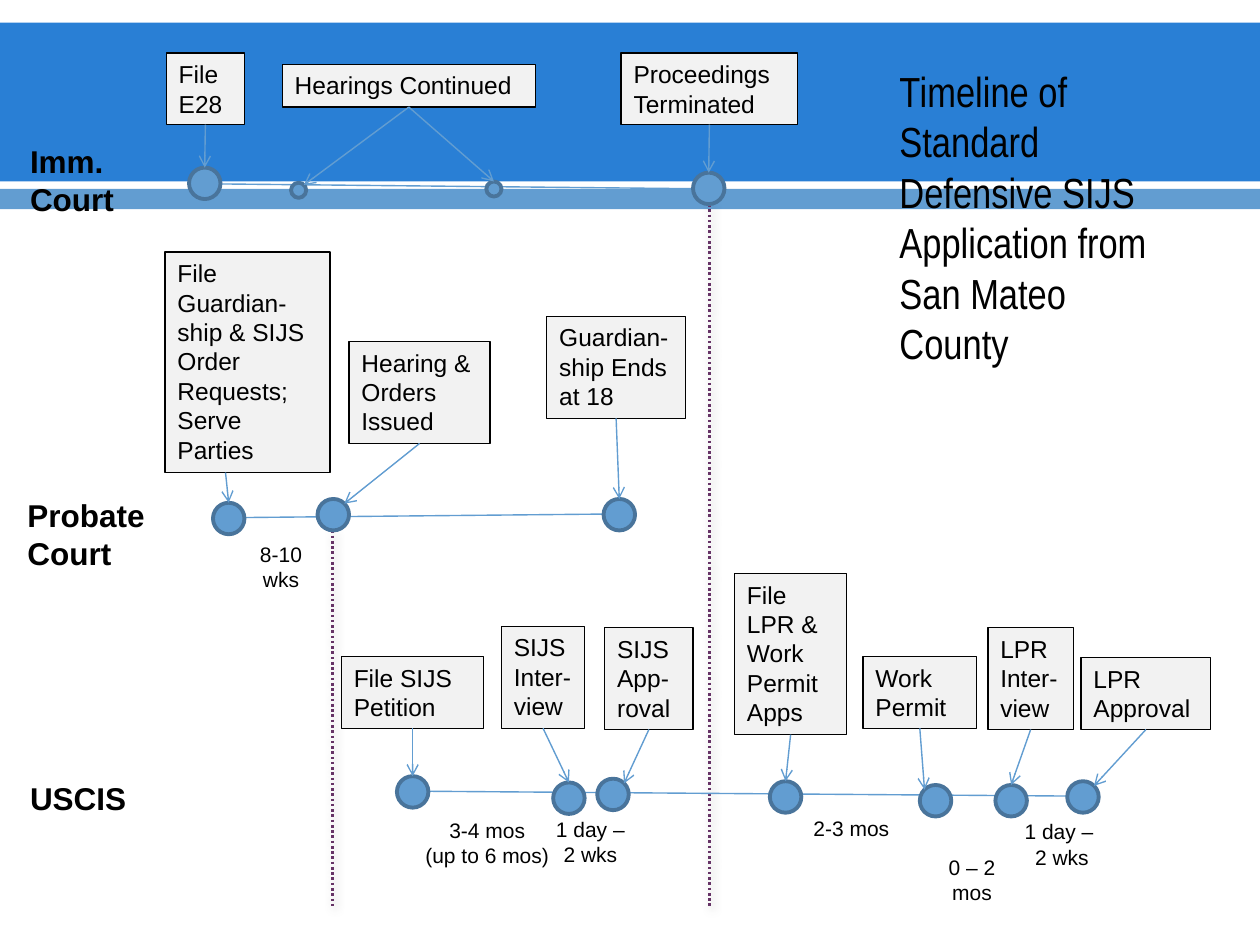
from lxml.etree import SubElement
from pptx import Presentation
from pptx.dml.color import RGBColor as Rgb
from pptx.enum.dml import MSO_LINE as Dash
from pptx.enum.shapes import MSO_CONNECTOR as Conn, MSO_SHAPE as Kind
from pptx.enum.text import MSO_ANCHOR as Anchor, MSO_AUTO_SIZE as Fit, PP_ALIGN as Align
from pptx.oxml.ns import qn
from pptx.util import Inches, Pt

# Every place is in columns and rows of a 100 by 75 grid
COLS, ROWS = 100, 75
DOT, SMALL = 2.5, 1.2
FOOT = 71.9

HUE = {"band": "297FD5", "blue": "629DD1", "rim": "49749B", "box": "F2F2F2",
       "ink": "000000", "mark": "663366"}

TITLE = ("Timeline of Standard Defensive SIJS Application from San Mateo County",
         70.4, 4.7, 22.5, 25.2)

BANDS = [("band", 1.8, 12.6), ("blue", 15, 1.6)]

COURTS = [
    ("Imm. Court", 1.4, 10.8, 9.3, 7.1),
    ("Probate Court", 1.2, 38.9, 11.6, 7.1),
    ("USCIS", 1.4, 61.3, 11.6, 4),
]

RAILS = [(17.5, 14.6, 57.5, 15), (16.9, 41.1, 47.9, 40.8), (34, 62.8, 87.2, 63.2)]

# Text, box place, then dots: left, top, size, where the arrow lands
STEPS = [
    ("File\nE28", (13.2, 4.2, 6.2, 5.7), [(15, 13.3, DOT, "top")]),
    ("Hearings Continued", (22.4, 5.1, 20.1, 3.4),
     [(23.1, 14.5, SMALL, "right"), (38.6, 14.4, SMALL, "top")]),
    ("Proceedings Terminated", (49.3, 4.2, 14, 5.7), [(55, 13.7, DOT, "top")]),
    ("File Guardian-ship & SIJS Order Requests; Serve Parties",
     (13.1, 20, 13.1, 17.5), [(16.9, 39.9, DOT, "top")]),
    ("Hearing & Orders Issued", (27.7, 27.1, 11.2, 8.1), [(25.2, 39.6, DOT, "right")]),
    ("Guardian-ship Ends at 18", (43.4, 25.1, 11, 8.1), [(47.9, 39.6, DOT, "top")]),
    ("File SIJS Petition", (27.1, 52.1, 11.3, 5.7), [(31.5, 61.6, DOT, "top")]),
    ("SIJS Inter-view", (39.8, 49.7, 6.6, 8.1), [(43.9, 62.1, DOT, "top")]),
    ("SIJS App-roval", (48, 49.8, 7, 8.1), [(47.4, 61.8, DOT, "right")]),
    ("File LPR & Work Permit Apps", (58.3, 45.5, 8.9, 12.8), [(61.1, 62, DOT, "top")]),
    ("Work Permit", (68.5, 52.1, 9, 5.7), [(73, 62.3, DOT, "left")]),
    ("LPR Inter-view", (78.4, 49.8, 6.8, 8.1), [(79, 62.3, DOT, "top")]),
    ("LPR Approval", (85.8, 52.2, 10.3, 5.7), [(84.7, 62, DOT, "right")]),
]
OFF = {"File Guardian-ship & SIJS Order Requests; Serve Parties": 17.9}

# Points on a dot, as shares of its size
LAND = {"top": (0.5, 0), "left": (0.15, 0.15), "right": (0.85, 0.15)}

# Dotted lines: column, top row
MARKS = [(56.3, 16.2), (26.4, 42.1)]

# Text, place, right indent of the first line in points
SPANS = [
    ("8-10 wks", (19.4, 42.5, 5.8, 5), 0),
    ("3-4 mos\n(up to 6 mos)", (32.2, 64.4, 13.4, 5), 3.3),
    ("1 day –\n2 wks", (42.5, 64.3, 10.1, 5), 10),
    ("2-3 mos", (61.1, 64.2, 13.4, 5), 3.3),
    ("1 day –\n 2 wks", (79, 64.5, 10.1, 5), 0),
    ("0 – 2 mos", (73, 67.3, 8.3, 7.1), 0),
]

deck = Presentation()
deck.slide_width, deck.slide_height = Inches(10), Inches(7.5)
slide = deck.slides.add_slide(deck.slide_layouts[6])
pen = slide.shapes


def place(x, y):
    return int(x * deck.slide_width / COLS), int(y * deck.slide_height / ROWS)


def shape(kind, spot, fill, rim=None, wide=0):
    item = pen.add_shape(kind, *place(*spot[:2]), *place(*spot[2:]))
    item.shadow.inherit = False
    item.fill.solid()
    item.fill.fore_color.rgb = Rgb.from_string(HUE[fill])
    if rim:
        item.line.color.rgb = Rgb.from_string(HUE[rim])
        item.line.width = Pt(wide)
    else:
        item.line.fill.background()
    return item


def write(item, text, size, face="Arial", bold=False, align=Align.LEFT):
    frame = item.text_frame
    frame.text = text
    frame.word_wrap = True
    frame.auto_size = Fit.SHAPE_TO_FIT_TEXT
    frame.vertical_anchor = Anchor.TOP
    for para in frame.paragraphs:
        para.alignment = align
        for run in para.runs:
            font = run.font
            font.size, font.name, font.bold = Pt(size), face, bold
            font.color.rgb = Rgb.from_string(HUE["ink"])
    return frame


def label(text, spot, *look, **more):
    item = pen.add_textbox(*place(*spot[:2]), *place(*spot[2:]))
    return write(item, text, *look, **more)


def line(start, end, hue="blue", wide=0.79):
    item = pen.add_connector(Conn.STRAIGHT, *place(*start), *place(*end))
    item.line.color.rgb = Rgb.from_string(HUE[hue])
    item.line.width = Pt(wide)
    return item, SubElement(item._element.spPr, qn("a:effectLst"))


# Bands
for hue, top, high in BANDS:
    shape(Kind.RECTANGLE, (0, top, COLS, high), hue)

# Dotted lines with a soft shadow
for col, top in MARKS:
    rule, glow = line((col, top), (col, FOOT), "mark", 1.5)
    rule.line.dash_style = Dash.ROUND_DOT
    soft = SubElement(glow, qn("a:outerShdw"), blurRad=str(Pt(5)),
                      dist=str(Pt(2)), dir="3600000", rotWithShape="0")
    tint = SubElement(soft, qn("a:srgbClr"), val=HUE["ink"])
    SubElement(tint, qn("a:alpha"), val="30000")

# Rails
for x1, y1, x2, y2 in RAILS:
    line((x1, y1), (x2, y2))

# Dots, boxes and arrows
for text, spot, dots in STEPS:
    box = shape(Kind.RECTANGLE, spot, "box", "ink", 0.75)
    write(box, text, 14)
    left, top, wide, high = spot
    for x, y, size, side in dots:
        shape(Kind.OVAL, (x, y, size, size), "blue", "rim", 2.22)
        dx, dy = LAND[side]
        start = OFF.get(text, left + wide / 2), top + high
        arrow, _ = line(start, (x + dx * size, y + dy * size))
        SubElement(arrow.line._get_or_add_ln(), qn("a:tailEnd"), type="arrow")
        if text not in OFF:
            arrow.begin_connect(box, 2)

# Time spans
for text, spot, gap in SPANS:
    frame = label(text, spot, 12, align=Align.CENTER)
    if gap:
        frame.paragraphs[0]._p.get_or_add_pPr().set("marR", str(Pt(gap)))

# Court names and title
for text, *spot in COURTS:
    label(text, spot, 18, bold=True)
label(TITLE[0], TITLE[1:], 24, "Arial Narrow")

deck.save("out.pptx")
